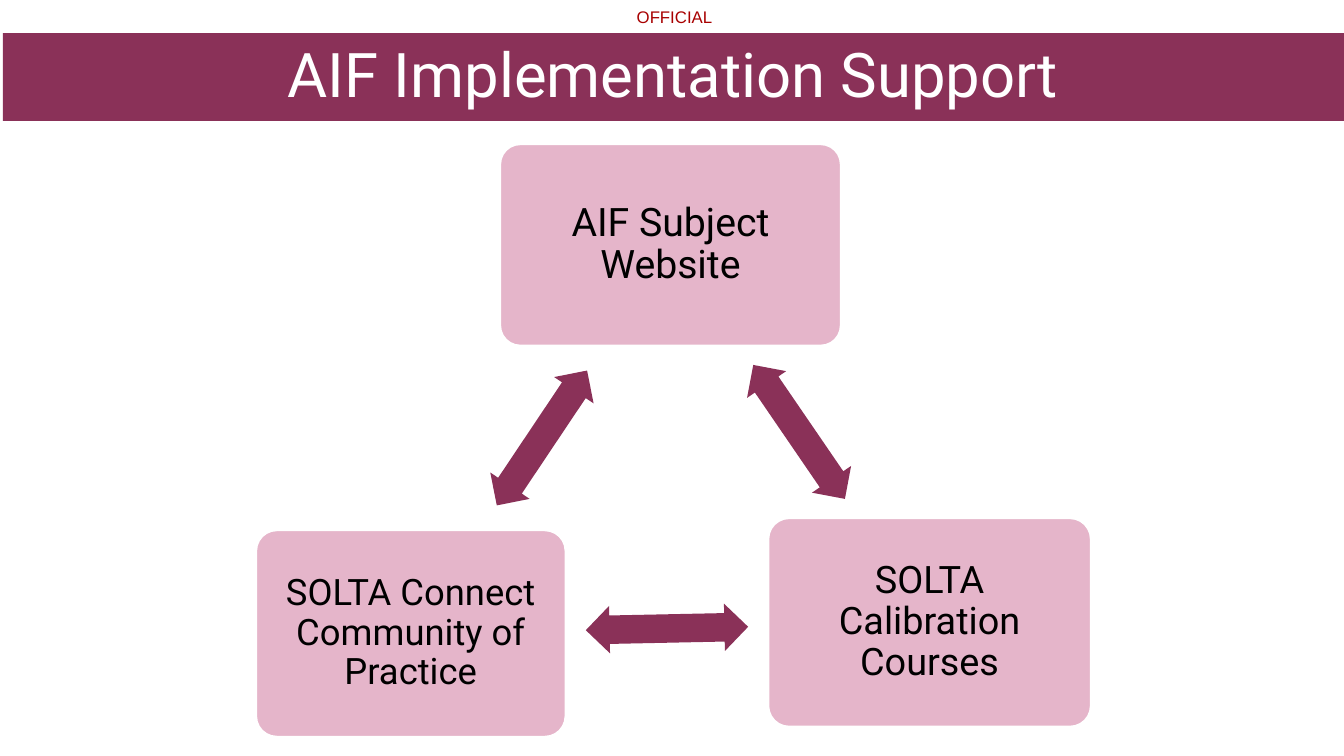
from pptx import Presentation
from pptx.dml.color import RGBColor as RGB
from pptx.enum.shapes import MSO_SHAPE as Kind
from pptx.enum.text import MSO_ANCHOR as Anchor, PP_ALIGN as Align
from pptx.util import Pt

MARK = "OFFICIAL"
TITLE = "AIF Implementation Support"
CARDS = [
    ("AIF Subject Website", (496, 143, 338, 200), 28),
    ("SOLTA Calibration Courses", (762, 514, 320, 207), 27),
    ("SOLTA Connect Community of Practice", (254, 526, 307, 205), 26),
]
ARROWS = [(712, 405, 55.6), (581, 600, 178.8), (457, 411, 303.8)]
ARROW_SIZE = (161, 47)
PAD = 17

THEME = {
    "plum": RGB.from_string("8A3158"),
    "pink": RGB.from_string("E5B5CA"),
    "white": RGB.from_string("FFFFFF"),
    "black": RGB.from_string("000000"),
    "red": RGB.from_string("A80000"),
    "font": "Roboto",
    "mark font": "Arial",
    "title": 44,
    "mark": 12,
    "edge": 1.5,
}
SCALE = 9144


def px(*sizes):
    return [size * SCALE for size in sizes]


def write(shape, text, size, color, font, pad, space=0.9):
    frame = shape.text_frame
    frame.text = text
    frame.word_wrap = True
    frame.vertical_anchor = Anchor.MIDDLE
    (frame.margin_left, frame.margin_right,
     frame.margin_top, frame.margin_bottom) = px(*pad)
    para = frame.paragraphs[0]
    para.alignment = Align.CENTER
    para.line_spacing = space
    para.font.name = font
    para.font.size = Pt(size)
    para.font.color.rgb = THEME[color]


def draw(slide, kind, box, fill):
    shape = slide.shapes.add_shape(kind, *px(*box))
    shape.shadow.inherit = False
    shape.fill.solid()
    shape.fill.fore_color.rgb = THEME[fill]
    shape.line.fill.background()
    return shape


def main():
    deck = Presentation()
    deck.slide_width, deck.slide_height = px(1333, 750)
    slide = deck.slides.add_slide(deck.slide_layouts[6])

    mark = slide.shapes.add_textbox(*px(629, 7, 80, 20))
    write(mark, MARK, THEME["mark"], "red", THEME["mark font"], (0, 0, 0, 0), 1.0)
    mark.text_frame.word_wrap = False

    band = draw(slide, Kind.RECTANGLE, (3, 33, 1330, 87), "plum")
    write(band, TITLE, THEME["title"], "white", THEME["font"], (10, 10, 5, 5))

    for text, box, size in CARDS:
        card = draw(slide, Kind.ROUNDED_RECTANGLE, box, "pink")
        card.adjustments[0] = 0.1
        card.line.color.rgb = THEME["white"]
        card.line.width = Pt(THEME["edge"])
        write(card, text, size, "black", THEME["font"], (PAD,) * 4)

    for left, top, turn in ARROWS:
        arrow = draw(slide, Kind.LEFT_RIGHT_ARROW, (left, top, *ARROW_SIZE), "plum")
        arrow.adjustments[0] = 0.6
        arrow.adjustments[1] = 0.5
        arrow.rotation = turn

    deck.save("out.pptx")


if __name__ == "__main__":
    main()
